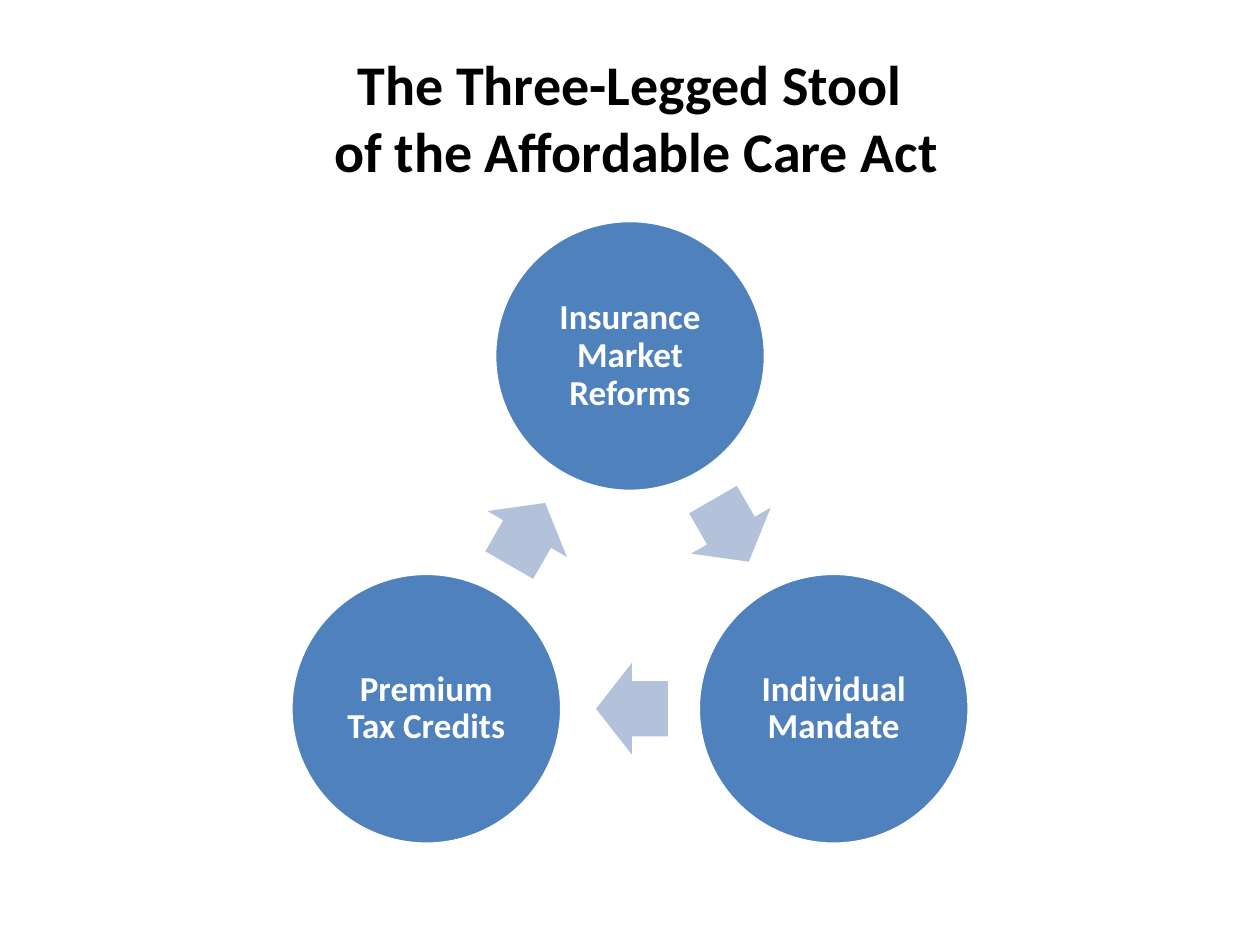
from dataclasses import dataclass
from math import cos, radians, sin

from pptx import Presentation
from pptx.dml.color import RGBColor
from pptx.enum.shapes import MSO_SHAPE
from pptx.enum.text import MSO_ANCHOR, PP_ALIGN
from pptx.util import Pt

OVAL = MSO_SHAPE.OVAL
ARROW = MSO_SHAPE.RIGHT_ARROW
MIDDLE = MSO_ANCHOR.MIDDLE
CENTER = PP_ALIGN.CENTER

HEX = {"ink": "000000", "paper": "FFFFFF", "leg": "4F81BD", "arrow": "B3C1DB"}
MID_X, MID_Y, REACH = 360, 337.8, 134.4
LEG_SIZE = 154.8
ARROW_W, ARROW_H, BACK = 41, 52.5, 1.1
FRAME = {"word_wrap": True, "vertical_anchor": MIDDLE}
SNUG = {f"margin_{side}": Pt(2) for side in ("left", "top", "right", "bottom")}


@dataclass
class Leg:
    text: str
    angle: float


LEGS = [
    Leg("Insurance Market Reforms", -90),
    Leg("Individual Mandate", 30),
    Leg("Premium Tax Credits", 150),
]


def apply(item, style: dict) -> None:
    for name, value in style.items():
        setattr(item, name, value)


def color(name: str) -> RGBColor:
    return RGBColor.from_string(HEX[name])


def polar(x: float, y: float, reach: float, angle: float) -> tuple[float, float]:
    turn = radians(angle)
    return x + reach * cos(turn), y + reach * sin(turn)


def write(frame, text: str, size: float, ink: str, style: dict, space: float) -> None:
    apply(frame, style)
    para = frame.paragraphs[0]
    para.text = text
    apply(para, {"alignment": CENTER, "line_spacing": space})
    for run in para.runs:
        apply(run.font, {"name": "Calibri", "size": Pt(size), "bold": True})
        run.font.color.rgb = color(ink)


def add_form(slide, kind, x: float, y: float, w: float, h: float, fill: str):
    form = slide.shapes.add_shape(kind, Pt(x - w / 2), Pt(y - h / 2), Pt(w), Pt(h))
    form.shadow.inherit = False
    form.fill.solid()
    form.fill.fore_color.rgb = color(fill)
    return form


def add_leg(slide, leg: Leg) -> None:
    x, y = polar(MID_X, MID_Y, REACH, leg.angle)
    form = add_form(slide, OVAL, x, y, LEG_SIZE, LEG_SIZE, "leg")
    form.line.color.rgb = color("paper")
    form.line.width = Pt(2)
    write(form.text_frame, leg.text, 20, "paper", FRAME | SNUG, 0.9)


def add_arrow(slide, leg: Leg) -> None:
    turn = leg.angle + 150
    x, y = polar(MID_X, MID_Y, REACH / 2, leg.angle + 60)
    x, y = polar(x, y, -BACK, turn)
    form = add_form(slide, ARROW, x, y, ARROW_W, ARROW_H, "arrow")
    form.line.fill.background()
    form.adjustments[0] = 0.6
    form.adjustments[1] = 0.5
    form.rotation = turn


def main() -> None:
    deck = Presentation()
    apply(deck, {"slide_width": Pt(720), "slide_height": Pt(540)})
    slide = deck.slides.add_slide(deck.slide_layouts[6])
    title = slide.shapes.add_textbox(Pt(36), Pt(21.6), Pt(648), Pt(90))
    text = "The Three-Legged Stool\v of the Affordable Care Act"
    write(title.text_frame, text, 32, "ink", FRAME, 1.0)
    for leg in LEGS:
        add_leg(slide, leg)
        add_arrow(slide, leg)
    deck.save("out.pptx")


if __name__ == "__main__":
    main()
